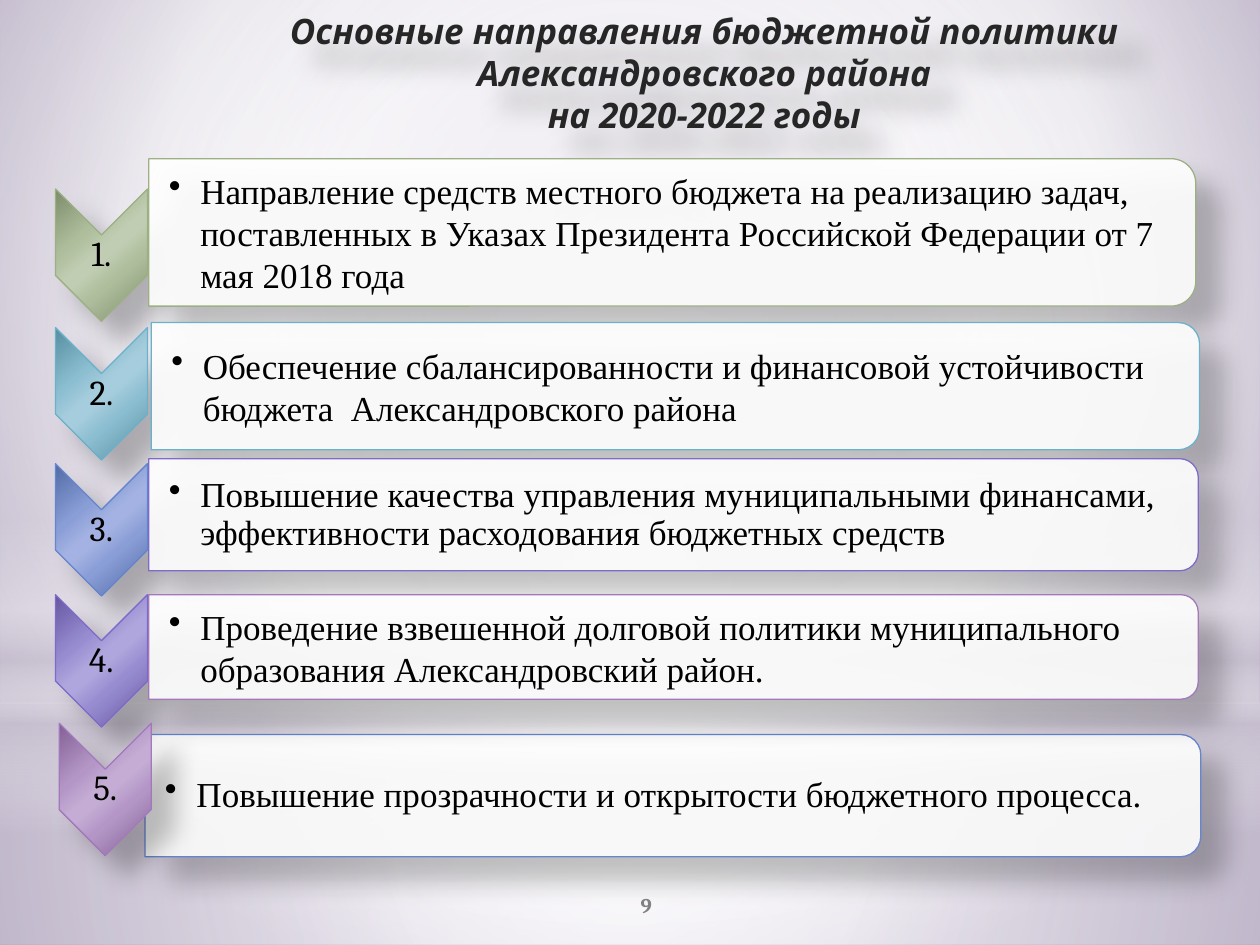
from dataclasses import dataclass
from typing import Optional

from lxml import etree
from pptx import Presentation
from pptx.dml.color import RGBColor
from pptx.enum import shapes, text
from pptx.oxml import ns
from pptx.util import Inches, Pt


@dataclass(frozen=True)
class Theme:
    title_font: str = "Noto Sans"
    body_font: str = "Times New Roman"
    number_font: str = "Cambria"
    main_size: int = 20
    footer_size: int = 12
    ink: str = "000000"
    title: str = "262626"
    footer: str = "808080"
    white: str = "FFFFFF"
    haze: str = "C9C2D1"
    backdrop: tuple = ((0, "C1B7CD"), (60, "FFFFFF"), (100, "A191B5"))


THEME = Theme()


@dataclass(frozen=True)
class Box:
    """Visible bounds in inches."""
    left: float
    top: float
    width: float
    height: float


@dataclass(frozen=True)
class Marker:
    number: str
    left: float
    top: float
    line: str
    dark: str
    middle: str
    light: str


@dataclass(frozen=True)
class Card:
    box: Box
    line: str
    wording: str
    spacing: Optional[float] = None
    justified: bool = False


CENTRE = (50, 50, 50, 50)
MARKER_WIDTH, MARKER_HEIGHT = 0.73, 1.05
GREEN, TEAL, BLUE, VIOLET, PLUM = "9CB084", "6BB1C9", "6585CF", "7E6BC9", "A379BB"

# Pairs run from back to front; the last goal lies behind the fifth marker
ROWS = (
    (Marker("1.", 0.44, 1.5, GREEN, "7D8D6A", "AEBD9C", "C0CDB2"),
     Card(Box(1.18, 1.26, 8.31, 1.17), GREEN,
          "Направление средств местного бюджета на реализацию задач, поставленных "
          "в Указах Президента Российской Федерации от 7 мая 2018 года")),
    (Marker("2.", 0.44, 2.6, TEAL, "568EA1", "8CBED1", "A6CDDD"),
     Card(Box(1.2, 2.56, 8.32, 1.01), TEAL,
          "Обеспечение сбалансированности и финансовой устойчивости "
          "бюджета  Александровского района")),
    (Marker("3.", 0.44, 3.68, BLUE, "516BA6", "899DD6", "A3B2E2"),
     Card(Box(1.15, 5.83, 8.38, 0.97), BLUE,
          "Повышение прозрачности и открытости бюджетного процесса.", 0.9, True)),
    (Marker("4.", 0.44, 4.72, VIOLET, "6556A1", "988CD1", "AFA6DD"),
     Card(Box(1.18, 3.64, 8.33, 0.89), VIOLET,
          "Повышение качества управления муниципальными финансами, "
          "эффективности расходования бюджетных средств", 0.9)),
    (Marker("5.", 0.47, 5.74, PLUM, "836196", "B395C6", "C4ACD4"),
     Card(Box(1.18, 4.72, 8.33, 0.83), PLUM,
          "Проведение взвешенной долговой политики муниципального "
          "образования Александровский район.")),
)


def add_node(parent, tag: str, **attributes):
    values = {name: str(value) for name, value in attributes.items()}
    return etree.SubElement(parent, ns.qn(tag), values)


def add_color(parent, color: str, opacity: float = 100) -> None:
    node = add_node(parent, "a:srgbClr", val=color)
    if opacity < 100:
        add_node(node, "a:alpha", val=int(opacity * 1000))


def set_gradient(properties, stops, angle: Optional[int] = None, focus=CENTRE) -> None:
    """Swap the plain fill for a linear gradient, or a circular one without an angle."""
    plain = next(child for child in properties
                 if child.tag in (ns.qn("a:noFill"), ns.qn("a:solidFill")))
    gradient = etree.Element(ns.qn("a:gradFill"), rotWithShape="1")
    stop_list = add_node(gradient, "a:gsLst")
    for position, *color in stops:
        add_color(add_node(stop_list, "a:gs", pos=position * 1000), *color)
    if angle is None:
        circle = add_node(gradient, "a:path")
        circle.set("path", "circle")
        sides = {side: share * 1000 for side, share in zip("ltrb", focus)}
        add_node(circle, "a:fillToRect", **sides)
    else:
        add_node(gradient, "a:lin", ang=angle * 60000, scaled=0)
    properties.replace(plain, gradient)


def add_shadow(shape) -> None:
    shape.shadow.inherit = False
    effects = shape.element.spPr.find(ns.qn("a:effectLst"))
    shadow = add_node(effects, "a:outerShdw", blurRad=Pt(15), dist=Pt(18),
                      dir=45 * 60000, algn="tl", rotWithShape=0)
    add_color(shadow, THEME.ink, 26)


def add_light(slide, kind, box: Box, stops, angle: Optional[int] = None) -> None:
    shape = slide.shapes.add_shape(kind, *map(Inches, (box.left, box.top, box.width, box.height)))
    shape.shadow.inherit = False
    shape.line.fill.background()
    shape.fill.background()
    set_gradient(shape.element.spPr, stops, angle)


def add_turned(slide, kind, box: Box, line: str):
    """Add a shape turned by 90 degrees that covers the visible box."""
    shift = (box.width - box.height) / 2
    shape = slide.shapes.add_shape(kind, Inches(box.left + shift), Inches(box.top - shift),
                                   Inches(box.height), Inches(box.width))
    shape.rotation = 90
    shape.line.color.rgb = RGBColor.from_string(line)
    shape.line.width = Pt(0.75)
    add_shadow(shape)
    return shape


def add_text(slide, box: Box, wording: str, font: str, color: str, size: int = THEME.main_size,
             align=text.PP_ALIGN.CENTER, bold: bool = False, italic: bool = False,
             insets: Optional[tuple] = None):
    shape = slide.shapes.add_textbox(*map(Inches, (box.left, box.top, box.width, box.height)))
    frame = shape.text_frame
    frame.word_wrap = True
    frame.vertical_anchor = text.MSO_ANCHOR.MIDDLE
    if insets:
        (frame.margin_left, frame.margin_top,
         frame.margin_right, frame.margin_bottom) = map(Inches, insets)
    frame.text = wording
    for paragraph in frame.paragraphs:
        paragraph.alignment = align
        for run in paragraph.runs:
            run.font.name, run.font.size = font, Pt(size)
            run.font.bold, run.font.italic = bold, italic
            run.font.color.rgb = RGBColor.from_string(color)
    return shape


def set_indent(paragraph, left: float, first: float = 0, bullet: str = "") -> None:
    properties = paragraph._p.get_or_add_pPr()
    properties.set("marL", str(Inches(left)))
    properties.set("indent", str(Inches(first)))
    if bullet:
        add_node(properties, "a:buChar", char=bullet)


def draw_marker(slide, marker: Marker) -> None:
    box = Box(marker.left, marker.top, MARKER_WIDTH, MARKER_HEIGHT)
    shape = add_turned(slide, shapes.MSO_SHAPE.CHEVRON, box, marker.line)
    shape.fill.background()
    set_gradient(shape.element.spPr, (
        (0, marker.dark), (33, marker.middle), (47, marker.light),
        (53, marker.light), (68, marker.middle), (100, marker.dark)), 139)
    label = add_text(slide, Box(marker.left, marker.top + 0.37, MARKER_WIDTH, 0.31),
                     marker.number, THEME.number_font, THEME.ink, insets=(0.01,) * 4)
    label.text_frame.paragraphs[0].line_spacing = 0.9


def draw_card(slide, card: Card) -> None:
    box = card.box
    shape = add_turned(slide, shapes.MSO_SHAPE.ROUND_2_SAME_RECTANGLE, box, card.line)
    shape.fill.solid()
    shape.fill.fore_color.rgb = RGBColor.from_string(THEME.white)
    fill_color = shape.element.spPr.find(ns.qn("a:solidFill"))[0]
    add_node(fill_color, "a:alpha", val=90000)
    inner = Box(box.left, box.top + 0.05 * box.height, box.width - 0.05, 0.9 * box.height)
    align = text.PP_ALIGN.JUSTIFY if card.justified else text.PP_ALIGN.LEFT
    label = add_text(slide, inner, card.wording, THEME.body_font, THEME.ink,
                     align=align, insets=(0.16, 0.01, 0.01, 0.01))
    paragraph = label.text_frame.paragraphs[0]
    paragraph.level = 1
    paragraph.line_spacing = card.spacing
    set_indent(paragraph, 0.25, -0.25, "•")


def main() -> None:
    presentation = Presentation()
    presentation.slide_width, presentation.slide_height = Inches(10), Inches(7.5)
    slide = presentation.slides.add_slide(presentation.slide_layouts[6])

    # Backdrop and soft lights
    slide.background.fill.solid()
    set_gradient(slide.element.find(".//" + ns.qn("p:bgPr")), THEME.backdrop, focus=(20, 10, 20, 60))
    white, haze = THEME.white, THEME.haze
    rectangle, oval = shapes.MSO_SHAPE.RECTANGLE, shapes.MSO_SHAPE.OVAL
    add_light(slide, rectangle, Box(0, 5.58, 10, 1.92), ((0, white, 91), (37, white, 76), (100, haze, 79)))
    add_light(slide, rectangle, Box(0, 0, 10, 5.58), ((0, white, 89), (48, white, 62), (100, haze, 79)))
    add_light(slide, rectangle, Box(0, 4.12, 10, 2.5), (
        (0, white, 0), (29, white, 30), (45, haze, 40),
        (55, white, 26), (65, haze, 60), (100, white, 0)), 90)
    add_light(slide, oval, Box(0, 1.75, 10, 5.58), ((0, white), (56, white, 0)))

    # Title
    title = add_text(slide, Box(0.98, 0.13, 9.02, 0.89),
                     "Основные направления бюджетной политики Александровского района\nна 2020-2022 годы",
                     THEME.title_font, THEME.title, bold=True, italic=True)
    add_shadow(title)
    for paragraph in title.text_frame.paragraphs:
        set_indent(paragraph, 0.2)

    # Numbered goals
    for marker, card in ROWS:
        draw_marker(slide, marker)
        draw_card(slide, card)

    # Page number
    add_text(slide, Box(4.13, 6.98, 2, 0.4), "9", THEME.number_font, THEME.footer,
             THEME.footer_size, bold=True)
    presentation.save("out.pptx")


if __name__ == "__main__":
    main()
